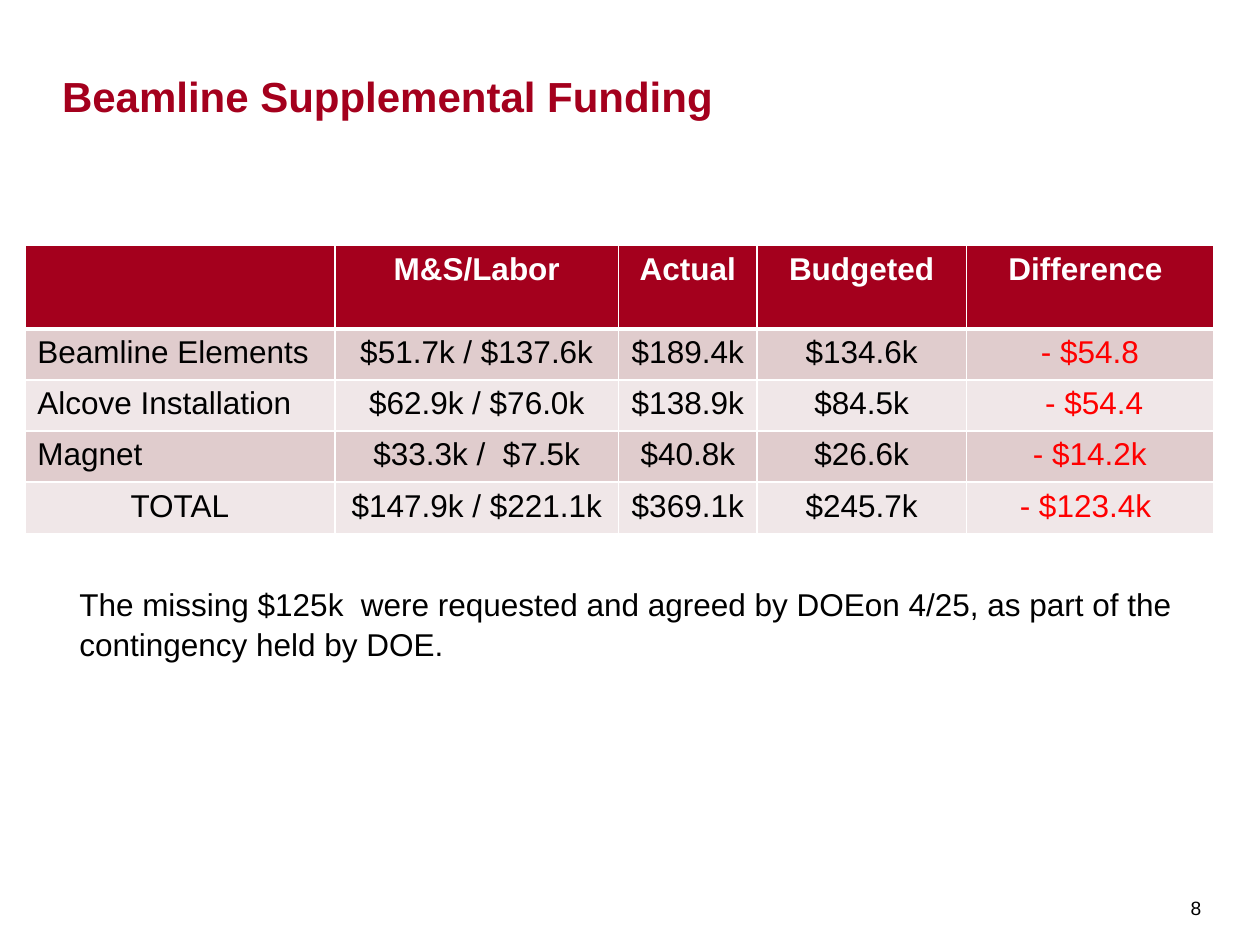
from lxml import etree
from pptx import Presentation
from pptx import util as u
from pptx.dml.color import RGBColor
from pptx.enum import text
from pptx.oxml.ns import qn

FONT = "Arial"
COLORS = {
    "crimson": "A4001D",
    "band_dark": "E0CCCD",
    "band_light": "F0E7E8",
    "white": "FFFFFF",
    "black": "000000",
    "red": "FF0000",
}
COL_WIDTHS = [6.25, 5.72, 2.79, 4.22, 4.98]
HEADER_HEIGHT, ROW_HEIGHT = 1.68, 1.03
HEADER = ["", "M&S/Labor", "Actual", "Budgeted", "Difference "]
ROWS = [
    ["Beamline Elements", "$51.7k / $137.6k", "$189.4k", "$134.6k", "- $54.8"],
    ["Alcove Installation", "$62.9k / $76.0k", "$138.9k", "$84.5k", " - $54.4"],
    ["Magnet", "$33.3k /  $7.5k", "$40.8k", "$26.6k", "- $14.2k"],
    ["TOTAL", "$147.9k / $221.1k", "$369.1k", "$245.7k", "- $123.4k "],
]


def rgb(name):
    return RGBColor.from_string(COLORS[name])


def style(font, size, color, bold=False):
    font.name, font.size, font.bold = FONT, u.Pt(size), bold
    font.color.rgb = rgb(color)


def add_run(p, content, size, color, bold=False):
    r = p.add_run()
    r.text = content
    style(r.font, size, color, bold)


def set_insets(tf, left, top, right, bottom):
    tf.margin_left, tf.margin_top = u.Cm(left), u.Cm(top)
    tf.margin_right, tf.margin_bottom = u.Cm(right), u.Cm(bottom)


def add_title(slide, content):
    sp = slide.shapes.title
    sp.left, sp.top, sp.width, sp.height = u.Cm(1.25), u.Cm(0.36), u.Cm(22.5), u.Cm(2.08)
    tf = sp.text_frame
    tf.auto_size = text.MSO_AUTO_SIZE.NONE
    tf.vertical_anchor = text.MSO_ANCHOR.BOTTOM
    set_insets(tf, 0, 0, 0, 0)
    p = tf.paragraphs[0]
    p.alignment = text.PP_ALIGN.LEFT
    add_run(p, content, 24, "crimson", bold=True)


def add_text(slide, content, left, top, width, height, size):
    sp = slide.shapes.add_textbox(u.Cm(left), u.Cm(top), u.Cm(width), u.Cm(height))
    tf = sp.text_frame
    tf.word_wrap = True
    add_run(tf.paragraphs[0], content, size, "black")
    return tf


def set_borders(cell, bottom):
    tc_pr = cell._tc.get_or_add_tcPr()
    for side, points in (("L", 1), ("R", 1), ("T", 1), ("B", bottom)):
        ln = etree.SubElement(tc_pr, qn("a:ln" + side), w=str(u.Pt(points)))
        fill = etree.SubElement(ln, qn("a:solidFill"))
        etree.SubElement(fill, qn("a:srgbClr"), val=COLORS["white"])


def fill_cell(cell, content, fill, color, align, bold=False, bottom=1):
    set_borders(cell, bottom)
    cell.fill.solid()
    cell.fill.fore_color.rgb = rgb(fill)
    p = cell.text_frame.paragraphs[0]
    p.alignment = align
    if content:
        add_run(p, content, 18, color, bold)
    else:
        style(p.font, 18, color, bold)


def add_funding_table(slide):
    height = HEADER_HEIGHT + ROW_HEIGHT * len(ROWS)
    table = slide.shapes.add_table(
        len(ROWS) + 1, len(HEADER), u.Cm(0.5), u.Cm(4.95),
        u.Cm(sum(COL_WIDTHS)), u.Cm(height)).table
    for column, width in zip(table.columns, COL_WIDTHS):
        column.width = u.Cm(width)
    for i, row in enumerate(table.rows):
        row.height = u.Cm(ROW_HEIGHT if i else HEADER_HEIGHT)

    # Header row
    center, left = text.PP_ALIGN.CENTER, text.PP_ALIGN.LEFT
    for j, label in enumerate(HEADER):
        fill_cell(table.cell(0, j), label, "crimson", "white", center, bold=True, bottom=3)

    # Banded rows: labels to the left, shortfalls in red
    for i, values in enumerate(ROWS, start=1):
        band = "band_dark" if i % 2 else "band_light"
        for j, value in enumerate(values):
            color = "red" if j == len(HEADER) - 1 else "black"
            align = left if j == 0 and value != "TOTAL" else center
            fill_cell(table.cell(i, j), value, band, color, align)


def main():
    prs = Presentation()
    prs.slide_width, prs.slide_height = u.Cm(25.4), u.Cm(19.05)
    slide = prs.slides.add_slide(prs.slide_layouts[5])

    # Slide number
    tf = add_text(slide, "8", 23.8, 17.55, 0.89, 1.5, 11)
    tf.vertical_anchor = text.MSO_ANCHOR.MIDDLE
    set_insets(tf, 0.2, 0.15, 0.2, 0.13)

    # Title, table and note
    add_title(slide, "Beamline Supplemental Funding")
    add_funding_table(slide)
    tf = add_text(
        slide,
        "The missing $125k  were requested and agreed by DOEon 4/25, "
        "as part of the contingency held by DOE.",
        1.35, 11.63, 23.19, 2.57, 18)
    tf.paragraphs[0].line_spacing = 1.05

    prs.save("out.pptx")


if __name__ == "__main__":
    main()
